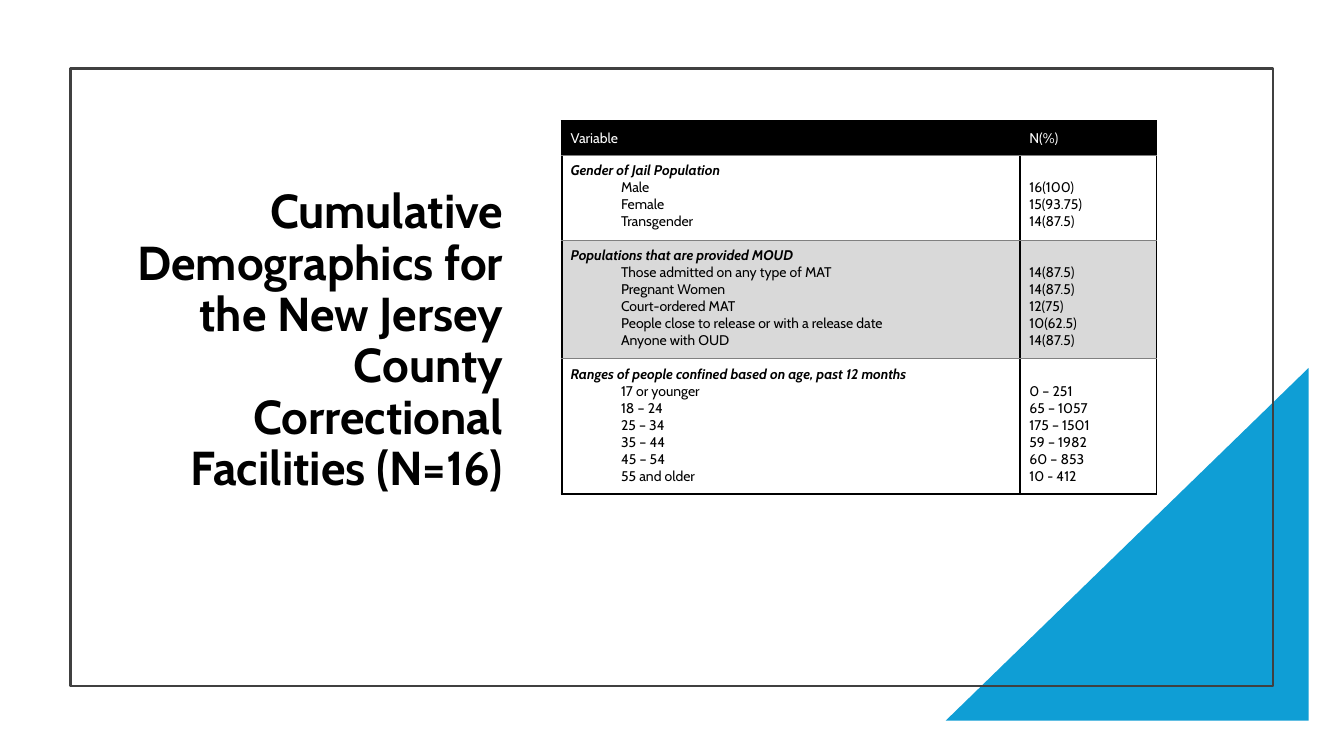
from pptx import Presentation
from pptx.dml.color import RGBColor
from pptx.enum.shapes import MSO_SHAPE
from pptx.enum.text import MSO_ANCHOR, PP_ALIGN
from pptx.oxml import parse_xml
from pptx.oxml.ns import nsdecls
from pptx.util import Inches, Pt


def color(code):
    return RGBColor.from_string(code)


def write(para, text, size, code, bold=False, italic=False):
    run = para.add_run()
    run.text = text
    look = {"name": "Cabin", "size": Pt(size), "bold": bold, "italic": italic}
    for key, value in look.items():
        setattr(run.font, key, value)
    run.font.color.rgb = color(code)


deck = Presentation()
deck.slide_width, deck.slide_height = Inches(13.33), Inches(7.5)
slide = deck.slides.add_slide(deck.slide_layouts[6])
shapes = slide.shapes

corner = shapes.add_shape(MSO_SHAPE.RIGHT_TRIANGLE, Inches(9.38), Inches(3.65), Inches(3.6), Inches(3.5))
corner.shadow.inherit = False
corner.fill.solid()
corner.fill.fore_color.rgb = color("0F9ED5")
corner.line.fill.background()
corner._element.spPr.xfrm.set("flipH", "1")

frame = shapes.add_shape(MSO_SHAPE.RECTANGLE, Inches(0.7), Inches(0.68), Inches(11.93), Inches(6.13))
frame.shadow.inherit = False
frame.fill.background()
frame.line.color.rgb = color("404040")
frame.line.width = Pt(1.5)

title = shapes.add_textbox(Inches(1.06), Inches(1.13), Inches(4.03), Inches(3.84)).text_frame
title.word_wrap = True
title.vertical_anchor = MSO_ANCHOR.BOTTOM
para = title.paragraphs[0]
para.alignment = PP_ALIGN.RIGHT
para.line_spacing = 0.9
write(para, "Cumulative Demographics for the New Jersey County Correctional Facilities (N=16)", 34, "000000", True)

groups = [
    ("Variable", "N(%)", []),
    ("Gender of Jail Population", "", [
        ("Male", "16(100)"),
        ("Female", "15(93.75)"),
        ("Transgender", "14(87.5)"),
    ]),
    ("Populations that are provided MOUD", "", [
        ("Those admitted on any type of MAT", "14(87.5)"),
        ("Pregnant Women", "14(87.5)"),
        ("Court-ordered MAT", "12(75)"),
        ("People close to release or with a release date", "10(62.5)"),
        ("Anyone with OUD", "14(87.5)"),
    ]),
    ("Ranges of people confined based on age, past 12 months", "", [
        ("17 or younger", "0 – 251"),
        ("18 – 24", "65 – 1057"),
        ("25 – 34", "175 – 1501"),
        ("35 – 44", "59 – 1982"),
        ("45 – 54", "60 – 853"),
        ("55 and older", "10 - 412"),
    ]),
]
fills = ["000000", "FFFFFF", "D9D9D9", "FFFFFF"]
thick, thin = ("000000", 1.5), ("808080", 0.5)

table = shapes.add_table(4, 2, Inches(5.57), Inches(1.2), Inches(5.9), Inches(3.7)).table
table.first_row = table.horz_banding = False
for col, width in zip(table.columns, [4.55, 1.35]):
    col.width = Inches(width)
for row, height in zip(table.rows, [0.34, 0.84, 1.18, 1.34]):
    row.height = Inches(height)

for r, (head, total, items) in enumerate(groups):
    for c, first in enumerate([head, total]):
        cell = table.cell(r, c)
        gap = 0.24 if items and c else 0.07
        edges = {"margin_left": 0.09, "margin_right": 0.07, "margin_top": gap, "margin_bottom": 0.07}
        for key, value in edges.items():
            setattr(cell, key, Inches(value))
        cell.vertical_anchor = MSO_ANCHOR.TOP if items else MSO_ANCHOR.MIDDLE
        cell.fill.solid()
        cell.fill.fore_color.rgb = color(fills[r])

        lines = [first] if first else []
        lines += [item[c] for item in items]
        for n, text in enumerate(lines):
            para = cell.text_frame.add_paragraph() if n else cell.text_frame.paragraphs[0]
            label = bool(items) and c == 0 and n == 0
            write(para, text, 10, "000000" if items else "FFFFFF", label, label)
            if n and c == 0:
                para._p.get_or_add_pPr().set("marL", str(Inches(0.5)))

        sides = {"L": thick, "R": thick, "T": thin if r else thick, "B": thick if r == 3 else thin}
        for n, (side, (code, width)) in enumerate(sides.items()):
            edge = parse_xml(
                f'<a:ln{side} {nsdecls("a")} w="{Pt(width)}"><a:solidFill>'
                f'<a:srgbClr val="{code}"/></a:solidFill></a:ln{side}>')
            cell._tc.get_or_add_tcPr().insert(n, edge)

deck.save("out.pptx")
